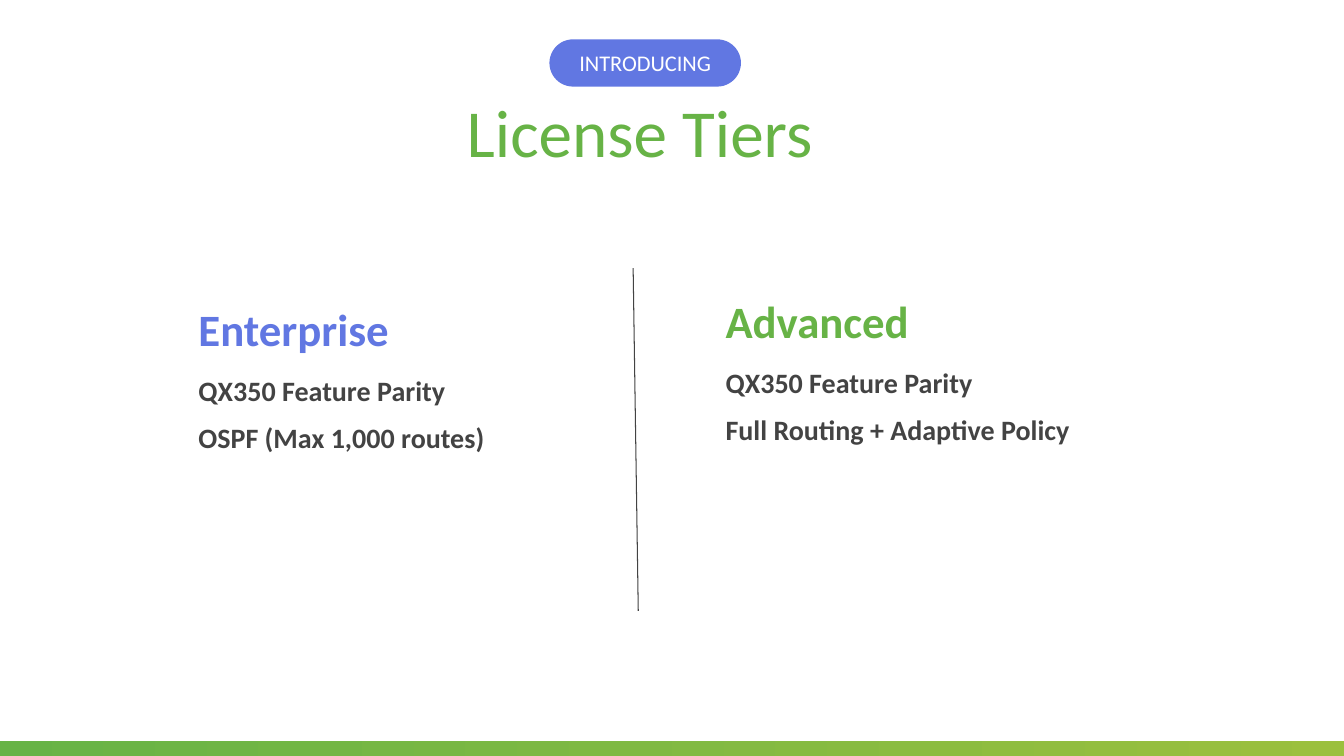
from lxml import etree
from pptx import Presentation
from pptx import util as u
from pptx.dml.color import RGBColor
from pptx.enum import shapes, text
from pptx.oxml.ns import qn

WIDE, HIGH = 13.33, 7.5
FONT = "Calibri"
HUES = {"green": "67B346", "lime": "9BC03E", "blue": "6177E2",
        "gray": "434343", "white": "FFFFFF"}
TIERS = [
    ((14.03, 36, 28.2, 31.4), 0.66, "Enterprise", "blue",
     ["QX350 Feature Parity", "OSPF (Max 1,000 routes)"]),
    ((53.25, 34.93, 36.75, 38.53), 0.71, "Advanced", "green",
     ["QX350 Feature Parity", "Full Routing + Adaptive Policy"]),
]


def hue(name):
    """Return the named colour."""
    return RGBColor.from_string(HUES[name])


def place(x, y, w, h):
    """Turn percentages of the slide into lengths."""
    return [u.Inches(part * side / 100)
            for part, side in zip((x, y, w, h), (WIDE, HIGH) * 2)]


def write(frame, lines, size, tint, bold=False, align=None, gap=0, pitch=None,
          anchor=text.MSO_ANCHOR.TOP):
    """Fill a text frame with one paragraph per line."""
    frame.word_wrap = True
    frame.vertical_anchor = anchor
    for i, line in enumerate(lines):
        para = frame.add_paragraph() if i else frame.paragraphs[0]
        para.alignment = align
        para.line_spacing = pitch
        if i:
            para.space_before = u.Pt(gap)
        run = para.add_run()
        run.text = line
        run.font.name = FONT
        run.font.size = u.Pt(size)
        run.font.bold = bold
        run.font.color.rgb = hue(tint)


def label(slide, box, lines, size, tint, **style):
    """Add a text box."""
    frame = slide.shapes.add_textbox(*place(*box)).text_frame
    write(frame, lines, size, tint, **style)


def block(slide, kind, box):
    """Add a flat shape without outline or shadow."""
    shape = slide.shapes.add_shape(kind, *place(*box))
    shape.shadow.inherit = False
    shape.line.fill.background()
    return shape


def footer(slide, box):
    """Draw the gradient bar along the bottom."""
    fill = block(slide, shapes.MSO_SHAPE.RECTANGLE, box).fill
    fill.gradient()
    fill.gradient_angle = 0
    for stop, tint in zip(fill.gradient_stops, ("green", "lime")):
        stop.color.rgb = hue(tint)


def header(slide, box):
    """Place the pill above the title."""
    x, y, w, h = box
    mid = {"align": text.PP_ALIGN.CENTER, "anchor": text.MSO_ANCHOR.MIDDLE}
    label(slide, (x, y + h * 0.35, w, h * 0.65), ["License Tiers"],
          48, "green", **mid)
    pill = block(slide, shapes.MSO_SHAPE.ROUNDED_RECTANGLE,
                 (40.88, y, 14.25, h * 0.35))
    pill.adjustments[0] = 0.5
    pill.fill.solid()
    pill.fill.fore_color.rgb = hue("blue")
    frame = pill.text_frame
    frame.margin_top = frame.margin_bottom = u.Inches(0.1)
    write(frame, ["INTRODUCING"], 16, "white", **mid)


def tier(slide, box, share, name, tint, facts):
    """Place a tier's heading over its features."""
    x, y, w, h = box
    head, step = 11.73, 12.73
    label(slide, (x, y, w * share, head), [name], 32, tint, bold=True,
          pitch=0.9, anchor=text.MSO_ANCHOR.BOTTOM)
    label(slide, (x, y + step, w, h - step), facts, 20, "gray",
          bold=True, gap=10)


def divider(slide, ends):
    """Draw the line between the tiers."""
    line = slide.shapes.add_connector(shapes.MSO_CONNECTOR.STRAIGHT,
                                      *place(*ends))
    line.line.color.rgb = hue("gray")
    line.line.width = u.Pt(0.75)
    etree.SubElement(line._element.spPr, qn("a:effectLst"))


def main():
    """Build and save the slide."""
    deck = Presentation()
    deck.slide_width, deck.slide_height = u.Inches(WIDE), u.Inches(HIGH)
    slide = deck.slides.add_slide(deck.slide_layouts[6])
    footer(slide, (0, 98, 100, 2))
    header(slide, (2.03, 5.2, 91.13, 17.87))
    for item in TIERS:
        tier(slide, *item)
    divider(slide, (47.11, 35.47, 47.49, 80.8))
    deck.save("out.pptx")


if __name__ == "__main__":
    main()
